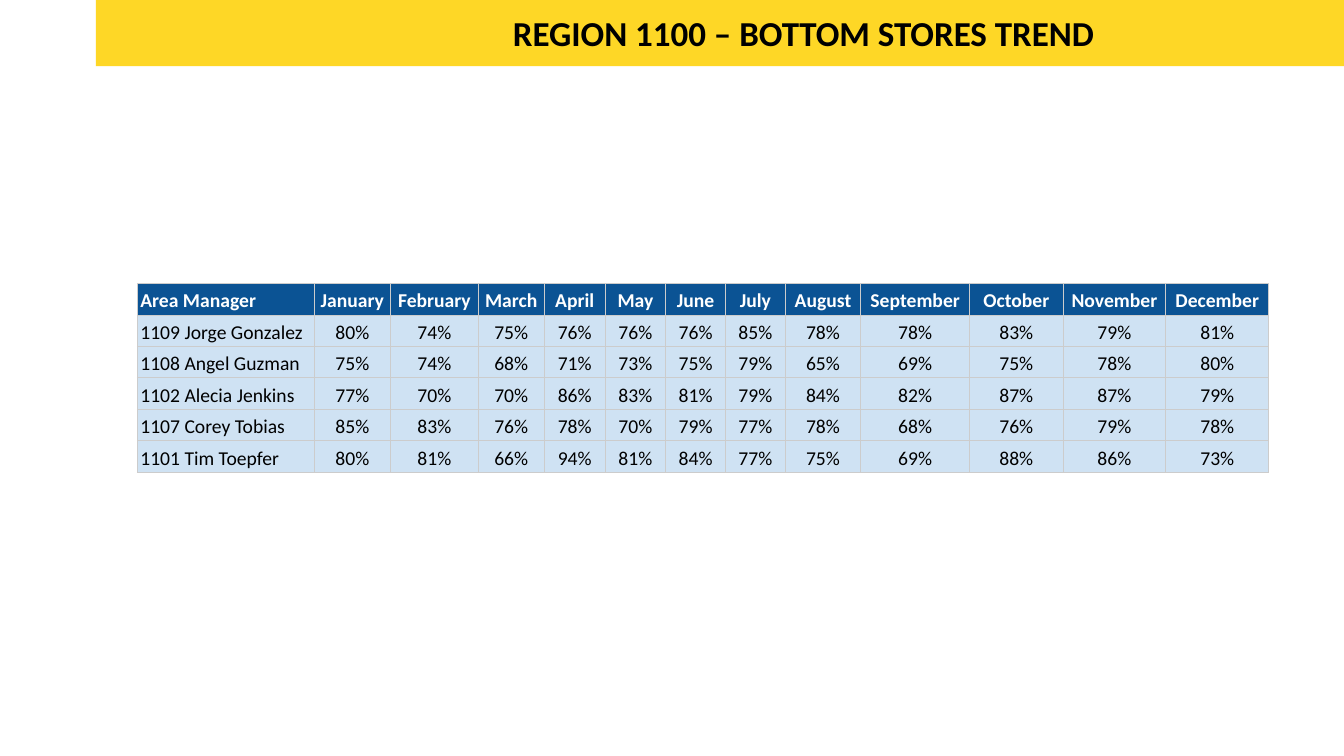
from lxml import etree
from pptx import Presentation
from pptx import util as u
from pptx.dml.color import RGBColor
from pptx.enum import shapes, text
from pptx.oxml import ns

BLACK = RGBColor(0x00, 0x00, 0x00)
WHITE = RGBColor(0xFF, 0xFF, 0xFF)
YELLOW = RGBColor(0xFE, 0xD7, 0x26)
NAVY = RGBColor(0x0B, 0x53, 0x94)
PALE_BLUE = RGBColor(0xCF, 0xE2, 0xF3)
GRID_GRAY = RGBColor(0xCC, 0xCC, 0xCC)

COLUMN_WIDTHS = [126.5, 54.5, 62.75, 47, 43.75, 43, 43, 42.5, 54, 77.75, 66.75, 73.5, 73.5]
HEADERS = ["Area Manager", "January", "February", "March", "April", "May", "June", "July",
           "August", "September", "October", "November", "December"]
SCORES = {
    "1109 Jorge Gonzalez": [80, 74, 75, 76, 76, 76, 85, 78, 78, 83, 79, 81],
    "1108 Angel Guzman": [75, 74, 68, 71, 73, 75, 79, 65, 69, 75, 78, 80],
    "1102 Alecia Jenkins": [77, 70, 70, 86, 83, 81, 79, 84, 82, 87, 87, 79],
    "1107 Corey Tobias": [85, 83, 76, 78, 70, 79, 77, 78, 68, 76, 79, 78],
    "1101 Tim Toepfer": [80, 81, 66, 94, 81, 84, 77, 75, 69, 88, 86, 73],
}


class SlideBuilder:
    """Draws styled elements on the current slide, with lengths in points."""

    font_name = "Calibri"
    title_size = 25
    table_size = 14
    row_height = 22.5
    border_width = 0.75

    def __init__(self, slide):
        self.slide = slide

    def band(self, left, top, width, height, color):
        shape = self.slide.shapes.add_shape(
            shapes.MSO_SHAPE.RECTANGLE, u.Pt(left), u.Pt(top), u.Pt(width), u.Pt(height))
        shape.shadow.inherit = False
        shape.fill.solid()
        shape.fill.fore_color.rgb = color
        shape.line.fill.background()

    def add_words(self, paragraph, words, size, color, bold, alignment):
        paragraph.alignment = alignment
        run = paragraph.add_run()
        run.text = words
        run.font.name = self.font_name
        run.font.size = u.Pt(size)
        run.font.bold = bold
        run.font.color.rgb = color

    def title(self, left, top, width, height, words):
        box = self.slide.shapes.add_textbox(u.Pt(left), u.Pt(top), u.Pt(width), u.Pt(height))
        box.text_frame.word_wrap = True
        self.add_words(box.text_frame.paragraphs[0], words, self.title_size, BLACK, True,
                       text.PP_ALIGN.CENTER)

    def borders(self, cell):
        properties = cell._tc.get_or_add_tcPr()
        for side in ("lnL", "lnR", "lnT", "lnB"):
            line = etree.SubElement(properties, ns.qn(f"a:{side}"),
                                    w=str(u.Pt(self.border_width)))
            fill = etree.SubElement(line, ns.qn("a:solidFill"))
            etree.SubElement(fill, ns.qn("a:srgbClr"), val=str(GRID_GRAY))

    def cell(self, cell, words, is_header, is_label):
        cell.margin_left = cell.margin_right = u.Pt(2.25)
        cell.margin_top = cell.margin_bottom = u.Pt(1.5)
        cell.vertical_anchor = text.MSO_ANCHOR.BOTTOM
        self.borders(cell)
        cell.fill.solid()
        cell.fill.fore_color.rgb = NAVY if is_header else PALE_BLUE
        paragraph = cell.text_frame.paragraphs[0]
        paragraph.line_spacing = 1.15
        self.add_words(paragraph, words, self.table_size, WHITE if is_header else BLACK,
                       is_header, text.PP_ALIGN.LEFT if is_label else text.PP_ALIGN.CENTER)

    def table(self, left, top, widths, rows):
        table = self.slide.shapes.add_table(
            len(rows), len(widths), u.Pt(left), u.Pt(top), u.Pt(sum(widths)),
            u.Pt(self.row_height * len(rows))).table
        for column, width in zip(table.columns, widths):
            column.width = u.Pt(width)
        for row_index, values in enumerate(rows):
            table.rows[row_index].height = u.Pt(self.row_height)
            for column_index, words in enumerate(values):
                self.cell(table.cell(row_index, column_index), words,
                          row_index == 0, column_index == 0)


def main():
    presentation = Presentation()
    presentation.slide_width = u.Pt(960)
    presentation.slide_height = u.Pt(540)
    builder = SlideBuilder(presentation.slides.add_slide(presentation.slide_layouts[6]))
    builder.band(68.5, 0, 891.5, 47.25, YELLOW)
    builder.title(187.75, 4.5, 772.25, 37.5, "REGION 1100 – BOTTOM STORES TREND")
    score_rows = [[manager] + [f"{score}%" for score in scores]
                  for manager, scores in SCORES.items()]
    builder.table(98, 202.5, COLUMN_WIDTHS, [HEADERS] + score_rows)
    presentation.save("out.pptx")


if __name__ == "__main__":
    main()
